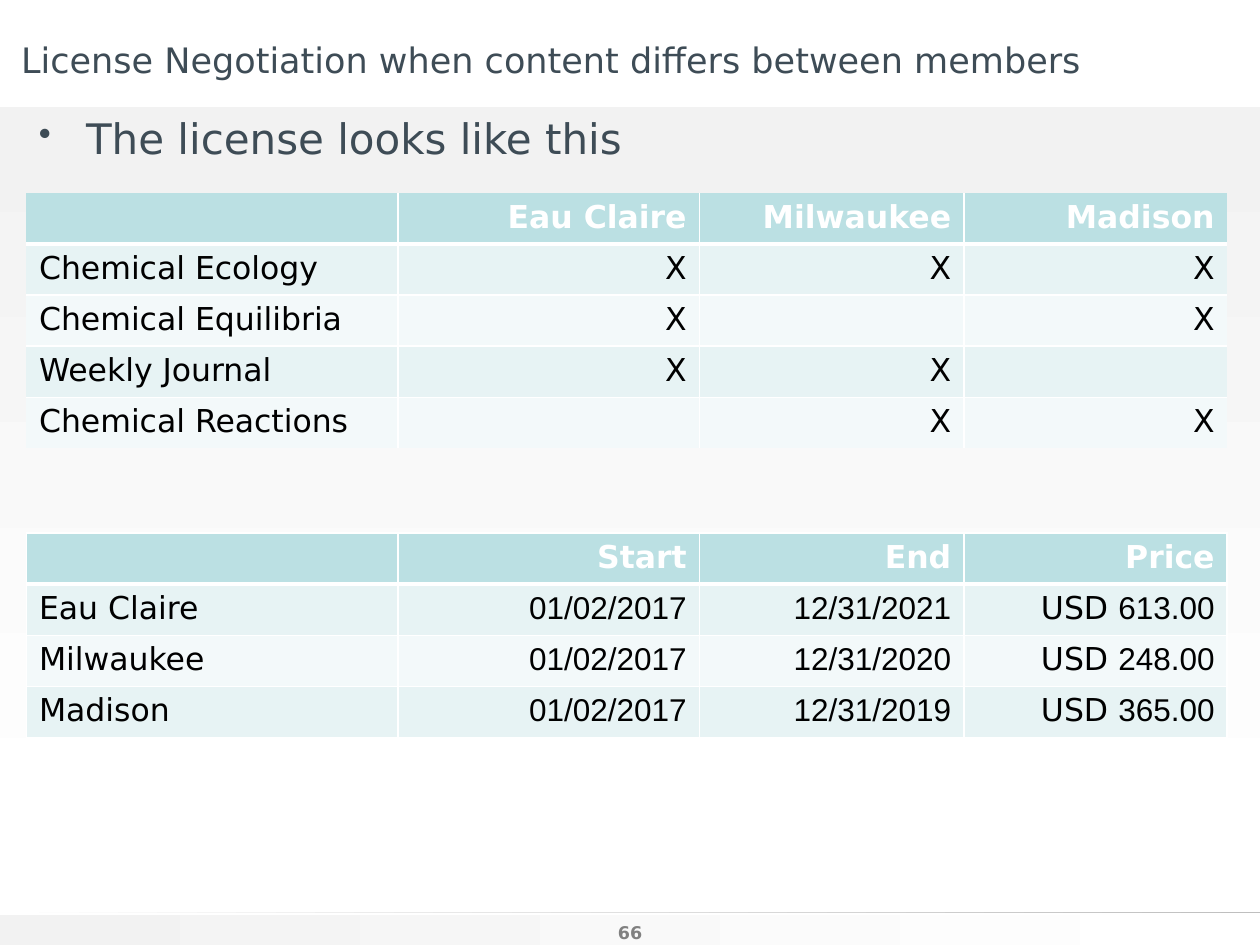
from dataclasses import dataclass
from typing import Any

from lxml import etree
from pptx import Presentation, util as u
from pptx.dml.color import RGBColor
from pptx.enum import shapes, text
from pptx.oxml import ns

LEFT, CENTER, RIGHT = text.PP_ALIGN.LEFT, text.PP_ALIGN.CENTER, text.PP_ALIGN.RIGHT
TOP, MIDDLE, BOTTOM = text.MSO_ANCHOR.TOP, text.MSO_ANCHOR.MIDDLE, text.MSO_ANCHOR.BOTTOM


def paint(target, color):
    target.rgb = RGBColor.from_string(color)


def write(frame, runs, size=18, color="000000", bold=False, align=LEFT):
    paragraph = frame.paragraphs[0]
    paragraph.alignment = align
    for words, face in runs:
        run = paragraph.add_run()
        run.text = words
        run.font.name = face
        run.font.size = u.Pt(size)
        run.font.bold = bold
        paint(run.font.color, color)
    return paragraph


def draw_edge(cell, side, width):
    properties = cell._tc.get_or_add_tcPr()
    edge = etree.SubElement(properties, ns.qn(f"a:{side}"), w=str(u.Pt(width)))
    if width:
        fill = etree.SubElement(edge, ns.qn("a:solidFill"))
        etree.SubElement(fill, ns.qn("a:srgbClr"), val="FFFFFF")
    else:
        etree.SubElement(edge, ns.qn("a:noFill"))


@dataclass
class LicenseSlide:
    """Draws the license slide in one consistent style."""

    slide: Any
    face: str = "DejaVu Sans"
    figure_face: str = "Liberation Sans"
    ink: str = "3E4C56"
    header: str = "BBE0E3"
    bands: tuple = ("E7F3F4", "F3F9FA")
    columns: tuple = (212.4, 172.1, 151.2, 150.5)
    row_height: float = 29.2

    def band(self, left, top, width, height, start, end, angle=0):
        band = self.slide.shapes.add_shape(
            shapes.MSO_SHAPE.RECTANGLE, *map(u.Pt, (left, top, width, height)))
        band.shadow.inherit = False
        band.line.fill.background()
        band.fill.gradient()
        band.fill.gradient_angle = angle
        for stop, color in zip(band.fill.gradient_stops, (start, end)):
            paint(stop.color, color)

    def label(self, words, left, top, width, height, anchor=TOP, **style):
        box = self.slide.shapes.add_textbox(*map(u.Pt, (left, top, width, height)))
        box.text_frame.word_wrap = True
        box.text_frame.vertical_anchor = anchor
        return write(box.text_frame, [(words, self.face)], **style)

    def bullet(self, words, left, top, width, height, indent=27, **style):
        paragraph = self.label(words, left, top, width, height, **style)
        paragraph.line_spacing = 0.9
        properties = paragraph._p.get_or_add_pPr()
        properties.set("marL", str(u.Pt(indent)))
        properties.set("indent", str(-u.Pt(indent)))
        etree.SubElement(properties, ns.qn("a:buSzPct"), val="85000")
        etree.SubElement(properties, ns.qn("a:buChar"), char="•")

    def cell_runs(self, words):
        if not words[-1:].isdigit():
            return [(words, self.face)] if words else []
        unit, gap, figure = words.rpartition(" ")
        runs = [(unit + gap, self.face), (figure, self.figure_face)]
        return [run for run in runs if run[0]]

    def table(self, rows, left, top, outlined=False):
        height = self.row_height * len(rows)
        table = self.slide.shapes.add_table(
            len(rows), len(self.columns),
            *map(u.Pt, (left, top, sum(self.columns), height))).table
        table.horz_banding = False
        for column, width in zip(table.columns, self.columns):
            column.width = u.Pt(width)
        last_row, last_column = len(rows) - 1, len(self.columns) - 1
        for i, row in enumerate(rows):
            table.rows[i].height = u.Pt(self.row_height)
            for j, words in enumerate(row):
                cell = table.cell(i, j)
                edges = {
                    "lnL": int(outlined or j > 0),
                    "lnR": int(outlined or j < last_column),
                    "lnT": (int(outlined), 3)[i] if i < 2 else 1,
                    "lnB": 3 if i == 0 else int(outlined or i < last_row),
                }
                for side, width in edges.items():
                    draw_edge(cell, side, width)
                cell.fill.solid()
                paint(cell.fill.fore_color, self.bands[(i - 1) % 2] if i else self.header)
                write(cell.text_frame, self.cell_runs(words),
                      color="000000" if i else "FFFFFF", bold=i == 0,
                      align=RIGHT if j else LEFT)


def main():
    deck = Presentation()
    deck.slide_width, deck.slide_height = u.Pt(720), u.Pt(540)
    page = LicenseSlide(deck.slides.add_slide(deck.slide_layouts[6]))

    page.band(0, 522.7, 720, 17.3, "F2F2F2", "FFFFFF")
    page.label("66", 337, 506.2, 46, 36, anchor=BOTTOM,
               size=10, color="808080", bold=True, align=CENTER)
    page.band(0, 61.2, 720, 420.5, "F2F2F2", "FFFFFF", angle=270)
    page.band(0, 521.3, 720, 0.7, "FFFFFF", "BFBFBF")

    page.bullet("The license looks like this", 15.1, 64.1, 686.2, 103,
                size=24, color=page.ink)
    page.label("License Negotiation when content differs between members",
               5, 13, 712, 41.8, anchor=MIDDLE, size=20, color=page.ink)

    page.table([
        ("", "Eau Claire", "Milwaukee", "Madison"),
        ("Chemical Ecology", "X", "X", "X"),
        ("Chemical Equilibria", "X", "", "X"),
        ("Weekly Journal", "X", "X", ""),
        ("Chemical Reactions", "", "X", "X"),
    ], 15.1, 110.2)
    page.table([
        ("", "Start", "End", "Price"),
        ("Eau Claire", "01/02/2017", "12/31/2021", "USD 613.00"),
        ("Milwaukee", "01/02/2017", "12/31/2020", "USD 248.00"),
        ("Madison", "01/02/2017", "12/31/2019", "USD 365.00"),
    ], 15.1, 304.6, outlined=True)

    deck.save("out.pptx")


if __name__ == "__main__":
    main()
